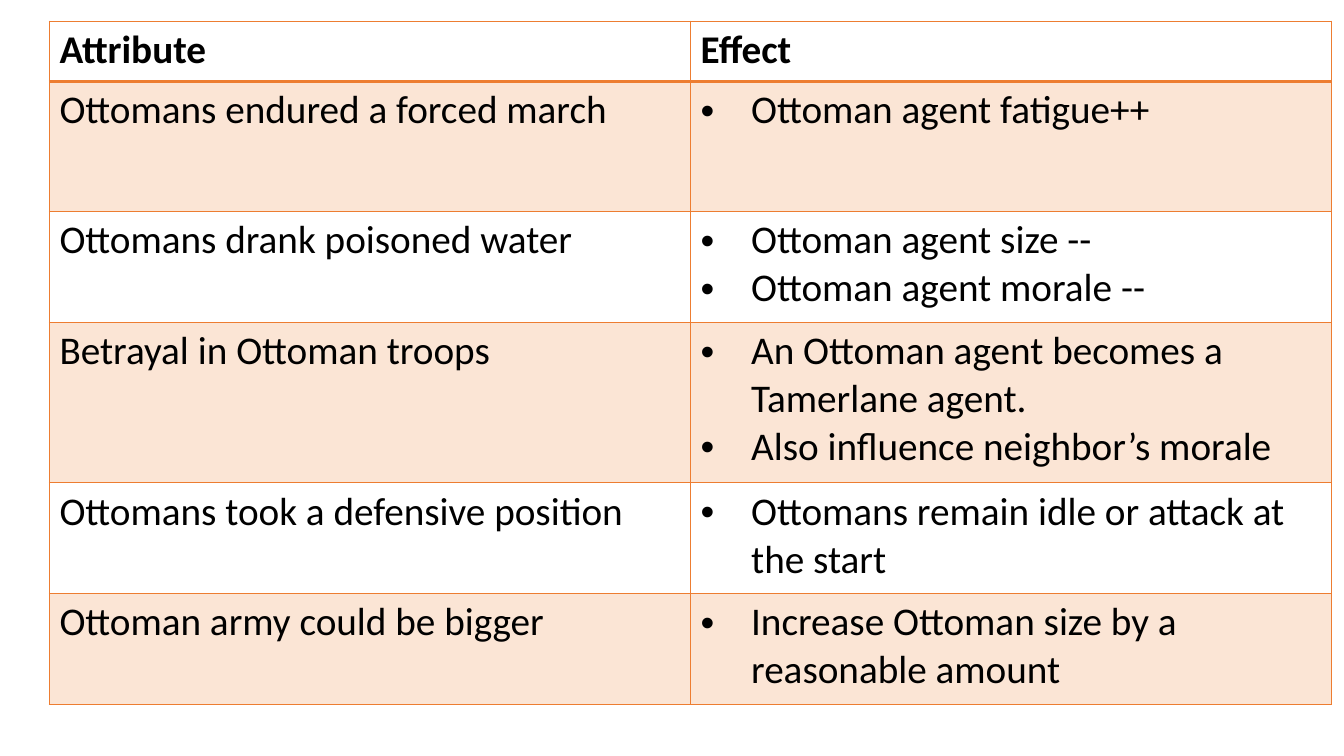
from dataclasses import dataclass

from lxml import etree
from pptx import Presentation
from pptx.dml.color import RGBColor
from pptx.oxml import ns
from pptx.util import Inches, Pt


@dataclass(frozen=True)
class Theme:
    font: str = "Calibri"
    size: int = 28
    ink: str = "000000"
    accent: str = "ED7D31"
    band_alpha: int = 20
    rule: int = 1
    header_rule: int = 2


THEME = Theme()
HEADINGS = ("Attribute", "Effect")
EFFECTS = [
    ("Ottomans endured a forced march", ["Ottoman agent fatigue++"]),
    ("Ottomans drank poisoned water", ["Ottoman agent size --", "Ottoman agent morale --"]),
    ("Betrayal in Ottoman troops",
     ["An Ottoman agent becomes a Tamerlane agent.", "Also influence neighbor’s morale"]),
    ("Ottomans took a defensive position", ["Ottomans remain idle or attack at the start"]),
    ("Ottoman army could be bigger", ["Increase Ottoman size by a reasonable amount"]),
]
ROW_HEIGHTS = (0.6, 1.29, 1.1, 1.59, 1.1, 1.1)
COLUMN_WIDTH = 6.36


def add_child(parent, tag, **attrs):
    return etree.SubElement(parent, ns.qn(tag), **attrs)


def set_borders(cell, top, bottom):
    """Rule all four sides; top and bottom are widths in points."""
    tc_pr = cell._tc.get_or_add_tcPr()
    sides = {"L": THEME.rule, "R": THEME.rule, "T": top, "B": bottom}
    for side, width in sides.items():
        ln = add_child(tc_pr, f"a:ln{side}", w=str(Pt(width)))
        add_child(add_child(ln, "a:solidFill"), "a:srgbClr", val=THEME.accent)


def set_band(cell, banded):
    """Tint the cell with the translucent accent, or leave it clear."""
    if not banded:
        cell.fill.background()
        return
    cell.fill.solid()
    cell.fill.fore_color.rgb = RGBColor.from_string(THEME.accent)
    color = cell._tc.tcPr.find(ns.qn("a:solidFill")).find(ns.qn("a:srgbClr"))
    add_child(color, "a:alpha", val=str(THEME.band_alpha * 1000))


def add_bullet(p):
    p_pr = p._p.get_or_add_pPr()
    p_pr.set("marL", str(Inches(0.5)))
    p_pr.set("indent", str(Inches(-0.5)))
    add_child(p_pr, "a:buFont", typeface="Arial")
    add_child(p_pr, "a:buChar", char="•")


def write_cell(cell, lines, bold=False, bulleted=False):
    tf = cell.text_frame
    for i, line in enumerate(lines):
        p = tf.add_paragraph() if i else tf.paragraphs[0]
        if bulleted:
            add_bullet(p)
        r = p.add_run()
        r.text = line
        r.font.name = THEME.font
        r.font.size = Pt(THEME.size)
        r.font.bold = bold
        r.font.color.rgb = RGBColor.from_string(THEME.ink)


def add_effects_table(s):
    rows = [([HEADINGS[0]], [HEADINGS[1]])]
    rows += [([attribute], effects) for attribute, effects in EFFECTS]
    columns = len(HEADINGS)
    table = s.shapes.add_table(
        len(rows), columns, Inches(0.49), Inches(0.21),
        Inches(COLUMN_WIDTH * columns), Inches(sum(ROW_HEIGHTS))).table
    for column in table.columns:
        column.width = Inches(COLUMN_WIDTH)
    for i, (row, height) in enumerate(zip(rows, ROW_HEIGHTS)):
        table.rows[i].height = Inches(height)
        header = i == 0
        for j, lines in enumerate(row):
            cell = table.cell(i, j)
            set_borders(cell,
                        top=THEME.header_rule if i == 1 else THEME.rule,
                        bottom=THEME.header_rule if header else THEME.rule)
            set_band(cell, banded=i % 2 == 1)
            write_cell(cell, lines, bold=header, bulleted=j == 1 and not header)


def main():
    prs = Presentation()
    prs.slide_width, prs.slide_height = Inches(13.33), Inches(7.5)
    s = prs.slides.add_slide(prs.slide_layouts[6])
    add_effects_table(s)
    prs.save("out.pptx")


if __name__ == "__main__":
    main()
